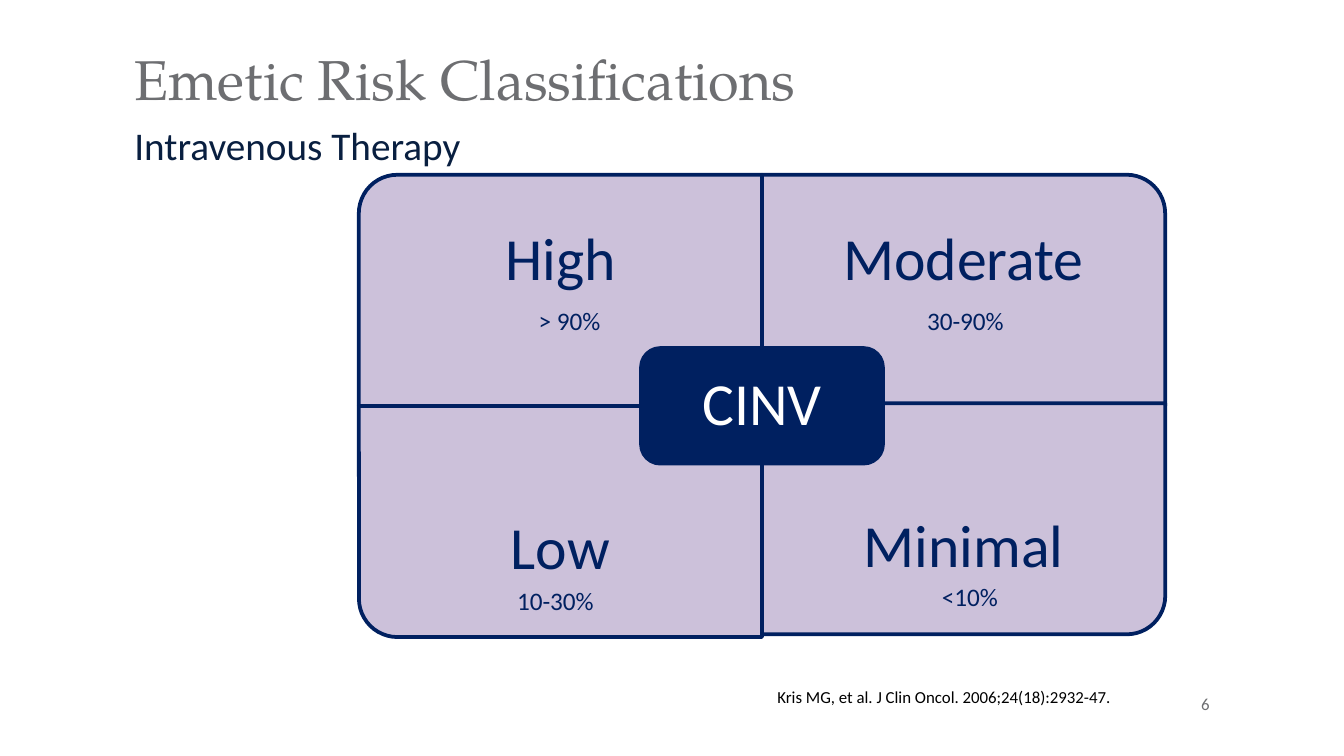
from pptx import Presentation
from pptx.dml.color import RGBColor
from pptx.enum.shapes import MSO_SHAPE
from pptx.enum.text import MSO_ANCHOR, PP_ALIGN
from pptx.util import Inches, Pt

TOP, MIDDLE, BOTTOM = MSO_ANCHOR.TOP, MSO_ANCHOR.MIDDLE, MSO_ANCHOR.BOTTOM
LEFT, CENTER, RIGHT = PP_ALIGN.LEFT, PP_ALIGN.CENTER, PP_ALIGN.RIGHT
ONE_ROUND, ALL_ROUND = MSO_SHAPE.ROUND_1_RECTANGLE, MSO_SHAPE.ROUNDED_RECTANGLE

NAVY = RGBColor(0x00, 0x20, 0x60)
LILAC = RGBColor(0xCC, 0xC1, 0xDA)
GRAY = RGBColor(0x6D, 0x6E, 0x71)
INK = RGBColor(0x09, 0x1F, 0x40)
WHITE = RGBColor(0xFF, 0xFF, 0xFF)
BLACK = RGBColor(0x00, 0x00, 0x00)
BODY_FONT, TITLE_FONT = "Calibri", "TeX Gyre Pagella"

# Content
TITLE = "Emetic Risk Classifications"
SUBTITLE = "Intravenous Therapy"
HUB = "CINV"
CITATION = "Kris MG, et al. J Clin Oncol. 2006;24(18):2932-47."
PAGE = "6"
# column, row, rotation, upward shift, level, share of patients,
# then left, top and width of the share
QUADRANTS = [
    (0, 0, 270, 0, "High", "> 90%", 3.91, 2.22, 1.25),
    (1, 0, 0, 0, "Moderate", "30-90%", 6.8, 2.22, 1.81),
    (0, 1, 180, 0, "Low", "10-30%", 3.75, 4.31, 1.56),
    (1, 1, 90, 0.02, "Minimal", "<10%", 6.91, 4.28, 0.62),
]

# Grid, in inches
MARGIN, CONTENT_W = 1, 8
GRID_X, GRID_Y, CELL_W, CELL_H = 2.67, 1.3, 3, 1.72
LABEL_H = CELL_H * 0.75
HUB_W, HUB_H = CELL_W * 0.6, CELL_H / 2


def write(holder, text, size, color, font=BODY_FONT, align=LEFT, anchor=TOP,
          inset=(0, 0), spacing=None, wrap=True):
    frame = holder.text_frame
    frame.word_wrap = wrap
    frame.vertical_anchor = anchor
    frame.margin_left = frame.margin_right = Inches(inset[0])
    frame.margin_top = frame.margin_bottom = Inches(inset[1])
    frame.text = text
    paragraph = frame.paragraphs[0]
    paragraph.alignment = align
    paragraph.space_before = Pt(0)
    if spacing:
        paragraph.line_spacing = spacing
    run_font = paragraph.runs[0].font
    run_font.name, run_font.size, run_font.color.rgb = font, Pt(size), color


def add_text(slide, box, *args, **style):
    write(slide.shapes.add_textbox(*map(Inches, box)), *args, **style)


def add_panel(slide, kind, center_x, center_y, width, height, fill, rotation=0):
    panel = slide.shapes.add_shape(
        kind, Inches(center_x - width / 2), Inches(center_y - height / 2),
        Inches(width), Inches(height))
    panel.rotation = rotation
    panel.shadow.inherit = False
    panel.fill.solid()
    panel.fill.fore_color.rgb = fill
    panel.line.color.rgb = NAVY
    panel.line.width = Pt(2)
    return panel


def main():
    deck = Presentation()
    deck.slide_width = Inches(10)
    deck.slide_height = deck.slide_width * 9 // 16
    slide = deck.slides.add_slide(deck.slide_layouts[5])

    # Heading
    title = slide.shapes.title
    title.left, title.top = Inches(MARGIN), Inches(0.33)
    title.width, title.height = Inches(CONTENT_W), Inches(0.5)
    write(title, TITLE, 30, GRAY, font=TITLE_FONT)
    add_text(slide, (MARGIN, 0.9, CONTENT_W, 0.35), SUBTITLE, 21, INK)

    # Quadrants: the rounded corner is turned to the outside of the grid
    for column, row, rotation, shift, level, *_ in QUADRANTS:
        x, y = GRID_X + column * CELL_W, GRID_Y + row * CELL_H - shift
        size = (CELL_H, CELL_W) if rotation % 180 else (CELL_W, CELL_H)
        add_panel(slide, ONE_ROUND, x + CELL_W / 2, y + CELL_H / 2, *size,
                  LILAC, rotation)
        label_y = y + row * (CELL_H - LABEL_H)
        add_text(slide, (x, label_y, CELL_W, LABEL_H), level, 32, NAVY,
                 align=CENTER, anchor=MIDDLE, inset=(0.25, 0.25), spacing=0.9)

    # Hub
    hub = add_panel(slide, ALL_ROUND, GRID_X + CELL_W, GRID_Y + CELL_H,
                    HUB_W, HUB_H, NAVY)
    write(hub, HUB, 32, WHITE, align=CENTER, anchor=MIDDLE,
          inset=(0.13, 0.13), spacing=0.9)

    # Shares
    for *_, share, x, y, width in QUADRANTS:
        add_text(slide, (x, y, width, 0.33), share, 13.5, NAVY,
                 inset=(0.1, 0.05), wrap=width > 1)

    # Footer
    add_text(slide, (3.92, 5.06, 4.44, 0.25), CITATION, 9, BLACK,
             align=RIGHT, inset=(0.1, 0.05))
    add_text(slide, (6.67, 5.01, 2.33, 0.3), PAGE, 9, GRAY,
             align=RIGHT, anchor=BOTTOM)

    deck.save("out.pptx")


if __name__ == "__main__":
    main()
